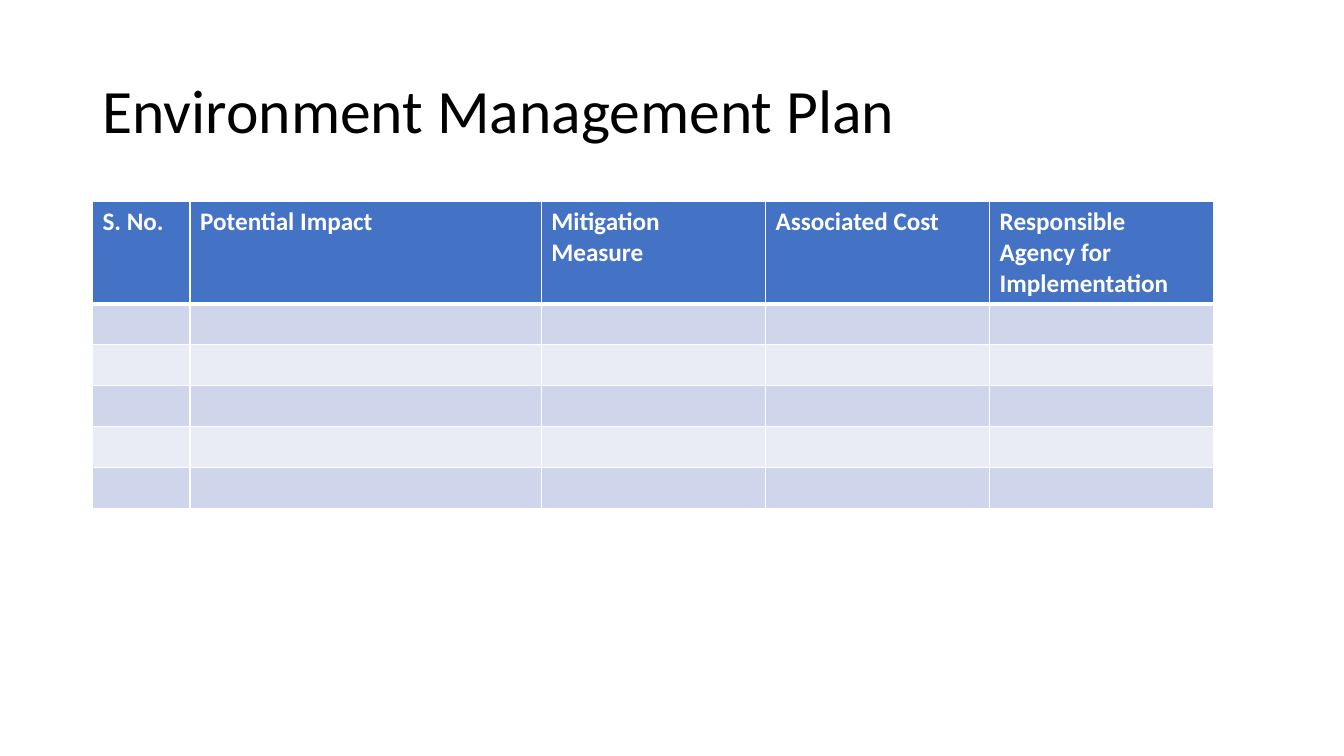
from lxml.etree import SubElement
from pptx import Presentation
from pptx.dml.color import RGBColor
from pptx.enum.text import MSO_ANCHOR as ANCHOR, PP_ALIGN as ALIGN
from pptx.oxml.ns import qn
from pptx.util import Cm, Pt


def color(value):
    return RGBColor.from_string(value)


def add_border(cell, side, width):
    ln = SubElement(cell._tc.get_or_add_tcPr(), qn(f"a:ln{side}"), w=str(Pt(width)))
    fill = SubElement(ln, qn("a:solidFill"))
    SubElement(fill, qn("a:srgbClr"), val="FFFFFF")


HEADERS = ["S. No.", "Potential Impact", "Mitigation Measure",
           "Associated Cost", "Responsible Agency for Implementation"]
WIDTHS = [2.46, 8.85, 5.65, 5.65, 5.65]
ROWS = 6
BANDS = ["E9EBF5", "CFD5EA"]

prs = Presentation()
prs.slide_width, prs.slide_height = Cm(33.87), Cm(19.05)
s = prs.slides.add_slide(prs.slide_layouts[5])

# Title
title = s.shapes.title
title.left, title.top, title.width, title.height = Cm(2.33), Cm(1.01), Cm(29.21), Cm(3.68)
tf = title.text_frame
tf.text = "Environment Management Plan"
tf.vertical_anchor = ANCHOR.MIDDLE
p = tf.paragraphs[0]
p.alignment = ALIGN.LEFT
p.line_spacing = 0.9
font = p.runs[0].font
font.name, font.size = "Calibri", Pt(44)
font.color.rgb = color("000000")

# Table grid
table = s.shapes.add_table(ROWS, len(HEADERS), Cm(2.33), Cm(5.08),
                           Cm(sum(WIDTHS)), Cm(7.7)).table
for column, width in zip(table.columns, WIDTHS):
    column.width = Cm(width)
for row in table.rows:
    row.height = Cm(1.03)

# Cell borders and fills, with a thick rule under the header
for i, row in enumerate(table.rows):
    for cell in row.cells:
        for side in "LRTB":
            thick = (i, side) in [(0, "B"), (1, "T")]
            add_border(cell, side, 3 if thick else 1)
        cell.fill.solid()
        cell.fill.fore_color.rgb = color(BANDS[i % 2] if i else "4472C4")

# Header text
for cell, text in zip(table.rows[0].cells, HEADERS):
    cell.text_frame.text = text
    font = cell.text_frame.paragraphs[0].runs[0].font
    font.name, font.size, font.bold = "Calibri", Pt(18), True
    font.color.rgb = color("FFFFFF")

prs.save("out.pptx")
